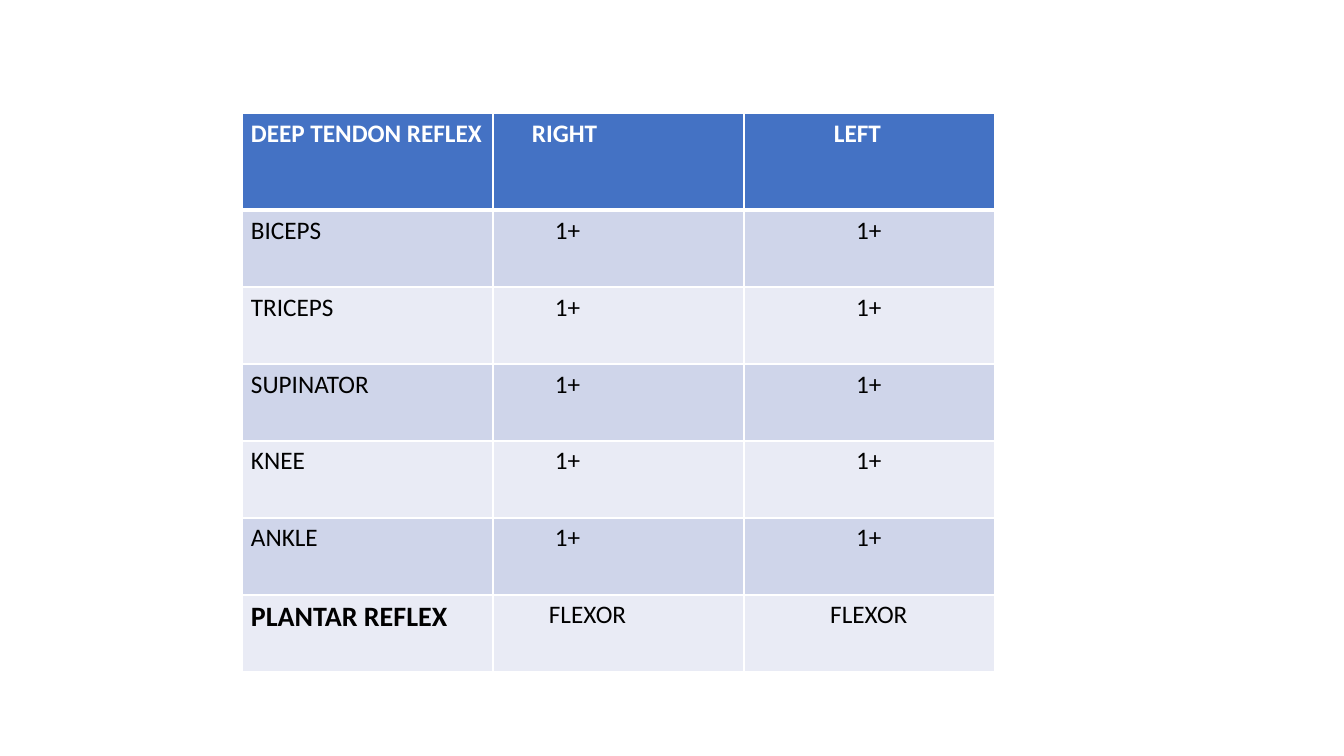
import pptx
import pptx.dml.color
import pptx.util
from lxml import etree
from pptx.oxml.ns import qn

HEADINGS = ["DEEP TENDON REFLEX", "RIGHT", "LEFT"]
REFLEXES = [
    ("BICEPS", "1+", "1+"),
    ("TRICEPS", "1+", "1+"),
    ("SUPINATOR", "1+", "1+"),
    ("KNEE", "1+", "1+"),
    ("ANKLE", "1+", "1+"),
    ("PLANTAR REFLEX", "FLEXOR", "FLEXOR"),
]
HEADING_INDENTS = [9, 39, 90]
RIGHT_INDENTS = {"1+": 62, "FLEXOR": 56}
HEADER_FILL, BAND_FILLS = "4472C4", ["CFD5EA", "E9EBF5"]
WHITE, BLACK = "FFFFFF", "000000"

SLIDE_WIDTH, SLIDE_HEIGHT = 1344, 756
TABLE_LEFT, TABLE_TOP = 242, 113
COLUMN_WIDTH, HEADER_HEIGHT, ROW_HEIGHT = 251, 97, 77
MARGIN = 9


def px(length):
    return pptx.util.Emu(round(length * 914400 / 100.8))


def color(value):
    return pptx.dml.color.RGBColor.from_string(value)


def add_borders(cell, top, bottom):
    """Draw white cell borders, one point wide at the sides."""
    properties = cell._tc.get_or_add_tcPr()
    sides = {"a:lnL": 1, "a:lnR": 1, "a:lnT": top, "a:lnB": bottom}
    for tag, width in sides.items():
        line = etree.SubElement(properties, qn(tag), w=str(pptx.util.Pt(width)))
        fill = etree.SubElement(line, qn("a:solidFill"))
        etree.SubElement(fill, qn("a:srgbClr"), val=WHITE)


def write_cell(cell, text, fill, font_color=BLACK, size=18, bold=False,
               indent=MARGIN, centered=False, top=1, bottom=1):
    add_borders(cell, top, bottom)
    cell.fill.solid()
    cell.fill.fore_color.rgb = color(fill)
    cell.margin_left = px(indent)
    para = cell.text_frame.paragraphs[0]
    if centered:
        para.alignment = pptx.enum.text.PP_ALIGN.CENTER
    span = para.add_run()
    span.text = text
    span.font.name = "Calibri"
    span.font.size = pptx.util.Pt(size)
    span.font.bold = bold
    span.font.color.rgb = color(font_color)


def main():
    deck = pptx.Presentation()
    deck.slide_width, deck.slide_height = px(SLIDE_WIDTH), px(SLIDE_HEIGHT)
    page = deck.slides.add_slide(deck.slide_layouts[6])

    heights = [HEADER_HEIGHT] + [ROW_HEIGHT] * len(REFLEXES)
    frame = page.shapes.add_table(
        len(heights), len(HEADINGS), px(TABLE_LEFT), px(TABLE_TOP),
        px(COLUMN_WIDTH * len(HEADINGS)), px(sum(heights)))
    table = frame.table
    for column in table.columns:
        column.width = px(COLUMN_WIDTH)
    for row, height in zip(table.rows, heights):
        row.height = px(height)

    for index, (heading, indent) in enumerate(zip(HEADINGS, HEADING_INDENTS)):
        write_cell(table.cell(0, index), heading, HEADER_FILL, WHITE,
                   bold=True, indent=indent, bottom=3)

    for number, (reflex, right, left) in enumerate(REFLEXES, start=1):
        band = {"fill": BAND_FILLS[(number - 1) % 2], "top": 3 if number == 1 else 1}
        plantar = reflex == "PLANTAR REFLEX"
        write_cell(table.cell(number, 0), reflex, size=20 if plantar else 18,
                   bold=plantar, **band)
        write_cell(table.cell(number, 1), right, indent=RIGHT_INDENTS[right], **band)
        write_cell(table.cell(number, 2), left, centered=True, **band)

    deck.save("out.pptx")


if __name__ == "__main__":
    import pptx.enum.text
    main()
